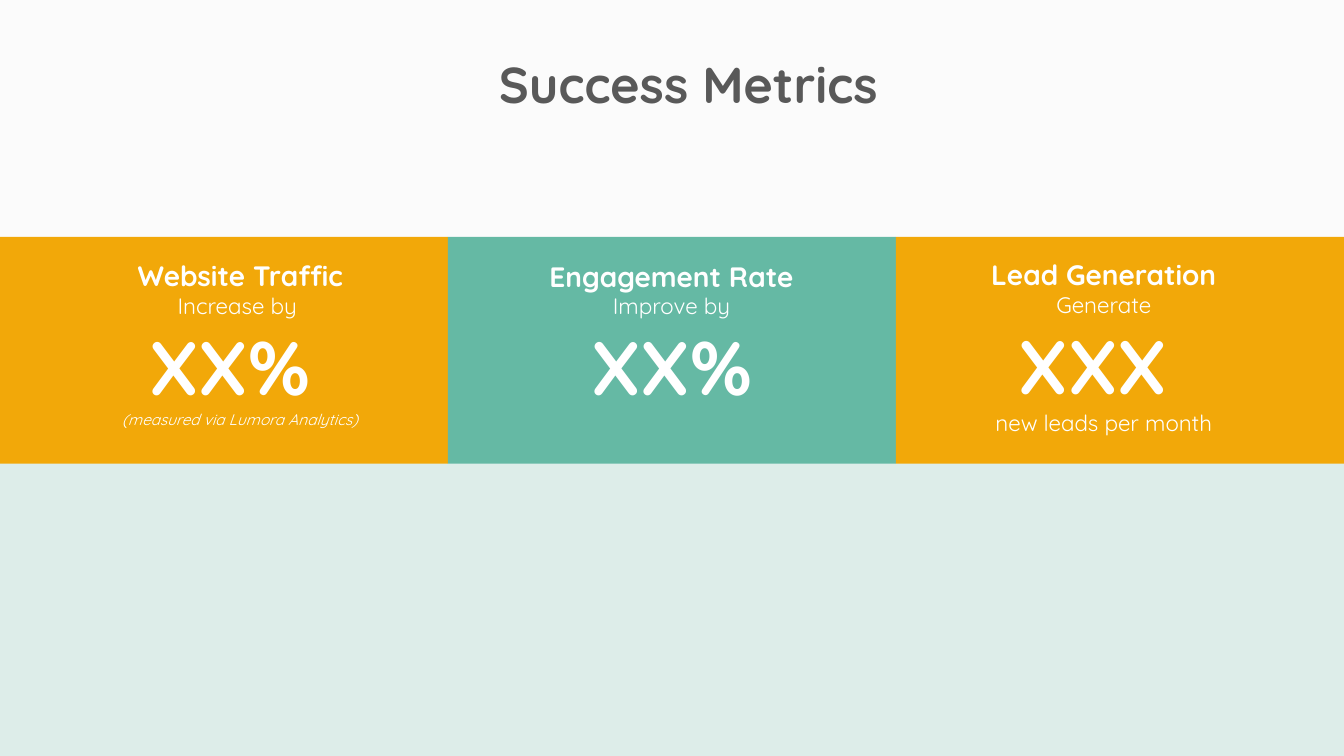
from lxml.etree import SubElement
from pptx import Presentation
from pptx.dml.color import RGBColor
from pptx.enum.shapes import MSO_SHAPE as Shape
from pptx.enum.text import MSO_ANCHOR as Anchor, MSO_AUTO_SIZE as AutoSize, PP_ALIGN as Align
from pptx.oxml.ns import qn
from pptx.util import Inches, Pt

COLORS = {
    "page": "FBFBFB",
    "teal": "65B9A4",
    "amber": "F2A809",
    "white": "FFFFFF",
    "gray": "595959",
}
COLUMNS, ROWS = 12, 30
CARD_COLUMNS = 4


class MetricsSlide:
    font_name = "Quicksand"

    def __init__(self, deck):
        self.column = deck.slide_width / COLUMNS
        self.row = deck.slide_height / ROWS
        self.page = deck.slides.add_slide(deck.slide_layouts[5])
        self.paint(self.page.background.fill, "page")

    def paint(self, fill, color):
        fill.solid()
        fill.fore_color.rgb = RGBColor.from_string(COLORS[color])

    def place(self, left, top, width, height):
        return (round(left * self.column), round(top * self.row),
                round(width * self.column), round(height * self.row))

    def style(self, para, size, color, bold=False, italic=False):
        para.alignment = Align.CENTER
        font = para.font
        font.name = self.font_name
        font.size = Pt(size)
        font.bold = bold
        font.italic = italic
        font.color.rgb = RGBColor.from_string(COLORS[color])

    def title(self, text, *area):
        box = self.page.shapes.title
        box.left, box.top, box.width, box.height = self.place(*area)
        frame = box.text_frame
        frame.text = text
        frame.vertical_anchor = Anchor.TOP
        frame.auto_size = AutoSize.NONE
        self.style(frame.paragraphs[0], 36, "gray", bold=True)

    def panel(self, color, *area, opacity=100):
        box = self.page.shapes.add_shape(Shape.RECTANGLE, *self.place(*area))
        box.shadow.inherit = False
        box.line.fill.background()
        self.paint(box.fill, color)
        if opacity < 100:
            tint = box.fill._xPr.find(qn("a:solidFill"))[0]
            SubElement(tint, qn("a:alpha"), val=str(opacity * 1000))

    def metric(self, lines, *area):
        box = self.page.shapes.add_textbox(*self.place(*area))
        frame = box.text_frame
        frame.word_wrap = True
        for index, (text, size, bold, italic) in enumerate(lines):
            para = frame.add_paragraph() if index else frame.paragraphs[0]
            para.text = text
            self.style(para, size, "white", bold, italic)


def heading(text):
    return text, 20, True, False


def label(text):
    return text, 16, False, False


def figure(text):
    return text, 54, True, False


def note(text):
    return text, 11, False, True


def main():
    deck = Presentation()
    deck.slide_width, deck.slide_height = Inches(13.33), Inches(7.5)
    slide = MetricsSlide(deck)
    slide.panel("teal", 0, 15, COLUMNS, 15, opacity=20)

    cards = [
        ("amber", 0.87, 10.08, 7.2,
         [heading("Website Traffic"), label("Increase by "), figure("XX% "),
          note("(measured via Lumora Analytics)")]),
        ("teal", 0.72, 10.08, 6.48,
         [heading("Engagement Rate"), label("Improve by"), figure("XX%")]),
        ("amber", 0.58, 10.04, 7.52,
         [heading("Lead Generation"), label("Generate"), figure("XXX "),
          label("new leads per month")]),
    ]
    for index, (color, inset, top, height, lines) in enumerate(cards):
        left = index * CARD_COLUMNS
        slide.panel(color, left, 9.4, CARD_COLUMNS, 9)
        slide.metric(lines, left + inset, top, 2.55, height)

    slide.title("Success Metrics", 1.41, 1.92, 9.47, 2.84)
    deck.save("out.pptx")


if __name__ == "__main__":
    main()
